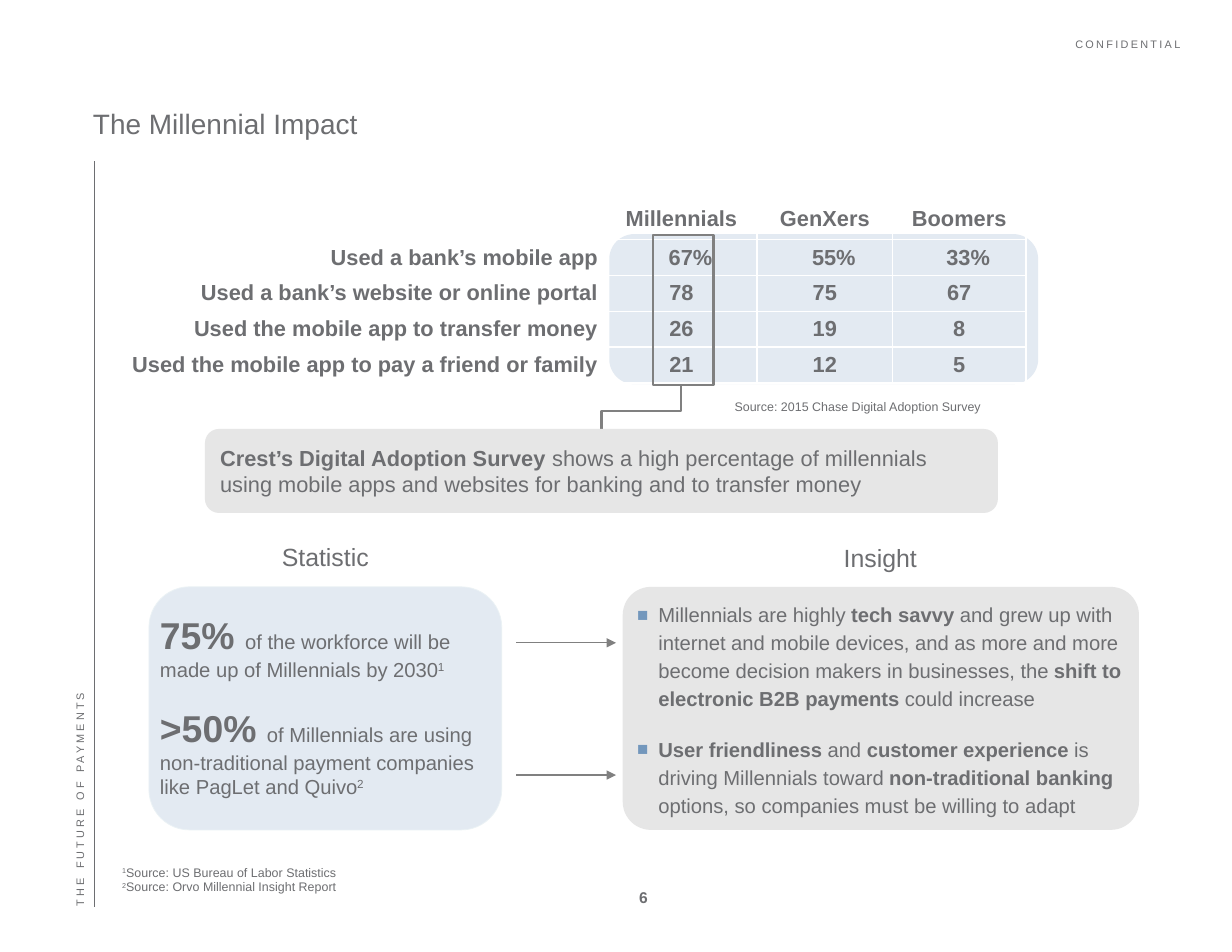
from lxml import etree
from pptx import Presentation
from pptx import util as u
from pptx.dml.color import RGBColor
from pptx.enum import shapes, text
from pptx.oxml.ns import qn

Inches, Pt = u.Inches, u.Pt
ALIGN, ANCHOR, SHAPE = text.PP_ALIGN, text.MSO_ANCHOR, shapes.MSO_SHAPE
FONT = "Arial"
COLORS = {"text": "6D6E71", "rule": "808080", "blue": "E3EAF2",
          "blue_edge": "EBF2F5", "gray": "E6E6E6", "bullet": "7397BC"}


def rgb(name):
    return RGBColor.from_string(COLORS[name])


def add_run(paragraph, words, size, bold=False, superscript=False, tracking=0):
    run = paragraph.add_run()
    run.text = words
    run.font.name, run.font.size, run.font.bold = FONT, Pt(size), bold
    run.font.color.rgb = rgb("text")
    if superscript:
        run.font._element.set("baseline", "30000")
    if tracking:
        run.font._element.set("spc", str(int(tracking * 100)))


def set_frame(frame, insets=(0.1, 0.05), anchor=ANCHOR.TOP, wrap=True):
    frame.margin_left = frame.margin_right = Inches(insets[0])
    frame.margin_top = frame.margin_bottom = Inches(insets[1])
    frame.vertical_anchor, frame.word_wrap = anchor, wrap


def add_text(slide, box, runs, align=ALIGN.LEFT, **frame_options):
    """Place one paragraph; each run is (words, size, options)."""
    label = slide.shapes.add_textbox(*map(Inches, box))
    set_frame(label.text_frame, **frame_options)
    paragraph = label.text_frame.paragraphs[0]
    paragraph.alignment = align
    for words, size, options in runs:
        add_run(paragraph, words, size, **options)
    return label


def add_panel(slide, box, fill=None, edge=None, width=0.5, corner=None,
              kind=SHAPE.ROUNDED_RECTANGLE):
    panel = slide.shapes.add_shape(kind, *map(Inches, box))
    panel.shadow.inherit = False
    if fill:
        panel.fill.solid()
        panel.fill.fore_color.rgb = rgb(fill)
    else:
        panel.fill.background()
    if edge:
        panel.line.color.rgb, panel.line.width = rgb(edge), Pt(width)
    else:
        panel.line.fill.background()
    if corner is not None:
        panel.adjustments[0] = corner
    return panel


def add_line(slide, start, end, color="rule", width=0.75, arrow=False,
             kind=shapes.MSO_CONNECTOR.STRAIGHT):
    line = slide.shapes.add_connector(kind, *map(Inches, start + end))
    line.line.color.rgb, line.line.width = rgb(color), Pt(width)
    if arrow:
        etree.SubElement(line.line._get_or_add_ln(), qn("a:tailEnd"), type="triangle")
    etree.SubElement(line._element.spPr, qn("a:effectLst"))
    return line


def add_frame_parts(slide):
    """Title, side rule, running labels and page number."""
    title = slide.shapes.title
    title.left, title.top, title.width, title.height = map(Inches, (0.83, 0.58, 9, 0.67))
    set_frame(title.text_frame, (0, 0), ANCHOR.BOTTOM)
    heading = title.text_frame.paragraphs[0]
    heading.alignment, heading.line_spacing = ALIGN.LEFT, Pt(27.9)
    add_run(heading, "The Millennial Impact", 18)

    add_line(slide, (0.84, 1.44), (0.84, 8.1), "text", 0.35)
    confidential = add_text(slide, (9.57, 0.38, 0.97, 0.07),
                            [("CONFIDENTIAL", 7, {"tracking": 1.5})],
                            ALIGN.RIGHT, insets=(0, 0), wrap=False)
    confidential.text_frame.paragraphs[0].line_spacing = Pt(5)
    deck_name = add_text(slide, (-2.33, 4.99, 6.05, 0.15),
                         [("THE FUTURE OF PAYMENTS", 7, {"tracking": 2})],
                         insets=(0, 0), anchor=ANCHOR.BOTTOM)
    deck_name.rotation = 270
    add_text(slide, (5.66, 7.93, 0.17, 0.17), [("6", 10, {"bold": True})],
             ALIGN.CENTER, insets=(0, 0), anchor=ANCHOR.MIDDLE, wrap=False)


def add_survey(slide, left, top):
    """Adoption table on its panel, with the Millennials column called out."""
    callout = add_line(slide, (left + 4.43, top + 1.33), (left + 5.18, top + 2.04),
                       width=1.5, kind=shapes.MSO_CONNECTOR.ELBOW)
    properties = callout._element.spPr
    properties.find(qn("a:xfrm")).set("rot", "5400000")
    guides = properties.find(qn("a:prstGeom")).get_or_add_avLst()
    etree.SubElement(guides, qn("a:gd"), name="adj1", fmla="val 78400")

    add_panel(slide, (left + 4.52, top + 0.32, 3.83, 1.34), "blue")
    rows = [
        ("", "Millennials", "GenXers", "Boomers"),
        ("Used a bank’s mobile app", "67%", "55%", "33%"),
        ("Used a bank’s website or online portal", "78", "75", "67"),
        ("Used the mobile app to transfer money", "26", "19", "8"),
        ("Used the mobile app to pay a friend or family", "21", "12", "5"),
    ]
    table = slide.shapes.add_table(len(rows), 4, *map(Inches, (left, top, 8.24, 1.65))).table
    table.first_row = table.horz_banding = False
    for column, width in zip(table.columns, (4.49, 1.35, 1.21, 1.19)):
        column.width = Inches(width)
    for r, values in enumerate(rows):
        table.rows[r].height = Inches(0.32 if r else 0.37)
        for c, value in enumerate(values):
            cell = table.cell(r, c)
            cell.fill.background()
            cell.vertical_anchor = ANCHOR.MIDDLE
            cell.margin_left = Inches(0.23 if value.endswith("%") else 0.07)
            cell.margin_right = Inches(0.07)
            cell.margin_top = cell.margin_bottom = 0
            paragraph = cell.text_frame.paragraphs[0]
            paragraph.alignment = ALIGN.CENTER if c else ALIGN.RIGHT
            if value:
                add_run(paragraph, value, 14, bold=True)

    summary = add_panel(slide, (left + 0.91, top + 2.06, 7.08, 0.75), "gray")
    set_frame(summary.text_frame, (0.1, 0.1), ANCHOR.MIDDLE)
    paragraph = summary.text_frame.paragraphs[0]
    paragraph.alignment = ALIGN.LEFT
    add_run(paragraph, "Crest’s Digital Adoption Survey ", 14, bold=True)
    add_run(paragraph, "shows a high percentage of millennials using mobile apps "
                       "and websites for banking and to transfer money", 14)
    add_panel(slide, (left + 4.91, top + 0.33, 0.54, 1.34), edge="rule", width=1.5,
              kind=SHAPE.RECTANGLE)
    add_text(slide, (left + 5.54, top + 1.74, 2.48, 0.24),
             [("Source: 2015 Chase Digital Adoption Survey", 8, {})], wrap=False)


def add_statistics(slide, left, top, width, height):
    add_panel(slide, (left, top, width, height), "blue", "blue_edge")
    add_text(slide, (left + 1.08, top - 0.45, 0.99, 0.37), [("Statistic", 16, {})],
             ALIGN.CENTER, wrap=False)
    statistics = [
        (0.18, 0.72, "75% ", "of the workforce will be made up of Millennials by 2030", "1"),
        (1.01, 0.94, ">50% ", "of Millennials are using non-traditional payment "
                              "companies like PagLet and Quivo", "2"),
    ]
    for offset, tall, figure, claim, note in statistics:
        add_text(slide, (left, top + offset, width, tall),
                 [(figure, 24, {"bold": True}), (claim, 13, {}),
                  (note, 13, {"superscript": True})])


def add_bullet(paragraph):
    properties = paragraph._p.get_or_add_pPr()
    properties.set("marL", str(Inches(0.19)))
    properties.set("indent", str(-Inches(0.19)))
    color = etree.SubElement(properties, qn("a:buClr"))
    etree.SubElement(color, qn("a:srgbClr"), val=COLORS["bullet"])
    etree.SubElement(properties, qn("a:buSzPct"), val="92000")
    etree.SubElement(properties, qn("a:buFont"), typeface=FONT)
    etree.SubElement(properties, qn("a:buChar"), char="■")


def add_insights(slide, left, top, width, height):
    add_text(slide, (left + 1.87, top - 0.44, 0.86, 0.37), [("Insight", 16, {})],
             ALIGN.CENTER, wrap=False)
    add_panel(slide, (left, top, width, height), "gray", corner=0.116)
    bold = {"bold": True}
    insights = [
        (0.06, 1.06, [("Millennials are highly ", 13, {}), ("tech savvy ", 13, bold),
                      ("and grew up with internet and mobile devices, and as more and "
                       "more become decision makers in businesses, the ", 13, {}),
                      ("shift to electronic B2B payments ", 13, bold),
                      ("could increase", 13, {})]),
        (1.26, 0.82, [("User friendliness ", 13, bold), ("and ", 13, {}),
                      ("customer experience ", 13, bold),
                      ("is driving Millennials toward ", 13, {}),
                      ("non-traditional banking ", 13, bold),
                      ("options, so companies must be willing to adapt", 13, {})]),
    ]
    for offset, tall, runs in insights:
        insight = add_text(slide, (left + 0.03, top + offset, width - 0.07, tall), runs)
        paragraph = insight.text_frame.paragraphs[0]
        add_bullet(paragraph)
        paragraph.line_spacing = 1.15


def add_footnotes(slide, box):
    notes = slide.shapes.add_textbox(*map(Inches, box)).text_frame
    set_frame(notes, (0.08, 0.04))
    sources = ("US Bureau of Labor Statistics", "Orvo Millennial Insight Report")
    for number, source in enumerate(sources, 1):
        paragraph = notes.paragraphs[0] if number == 1 else notes.add_paragraph()
        add_run(paragraph, str(number), 8, superscript=True)
        add_run(paragraph, f"Source: {source}", 8)


def main():
    deck = Presentation()
    deck.slide_width, deck.slide_height = Inches(11), Inches(8.5)
    slide = deck.slides.add_slide(deck.slide_layouts[5])
    add_frame_parts(slide)
    add_survey(slide, 0.92, 1.77)
    add_statistics(slide, 1.33, 5.24, 3.15, 2.17)
    for y in (5.74, 6.92):
        add_line(slide, (4.61, y), (5.5, y), arrow=True)
    add_insights(slide, 5.56, 5.24, 4.61, 2.17)
    add_footnotes(slide, (1.01, 7.68, 4.4, 0.35))
    deck.save("out.pptx")


if __name__ == "__main__":
    main()
